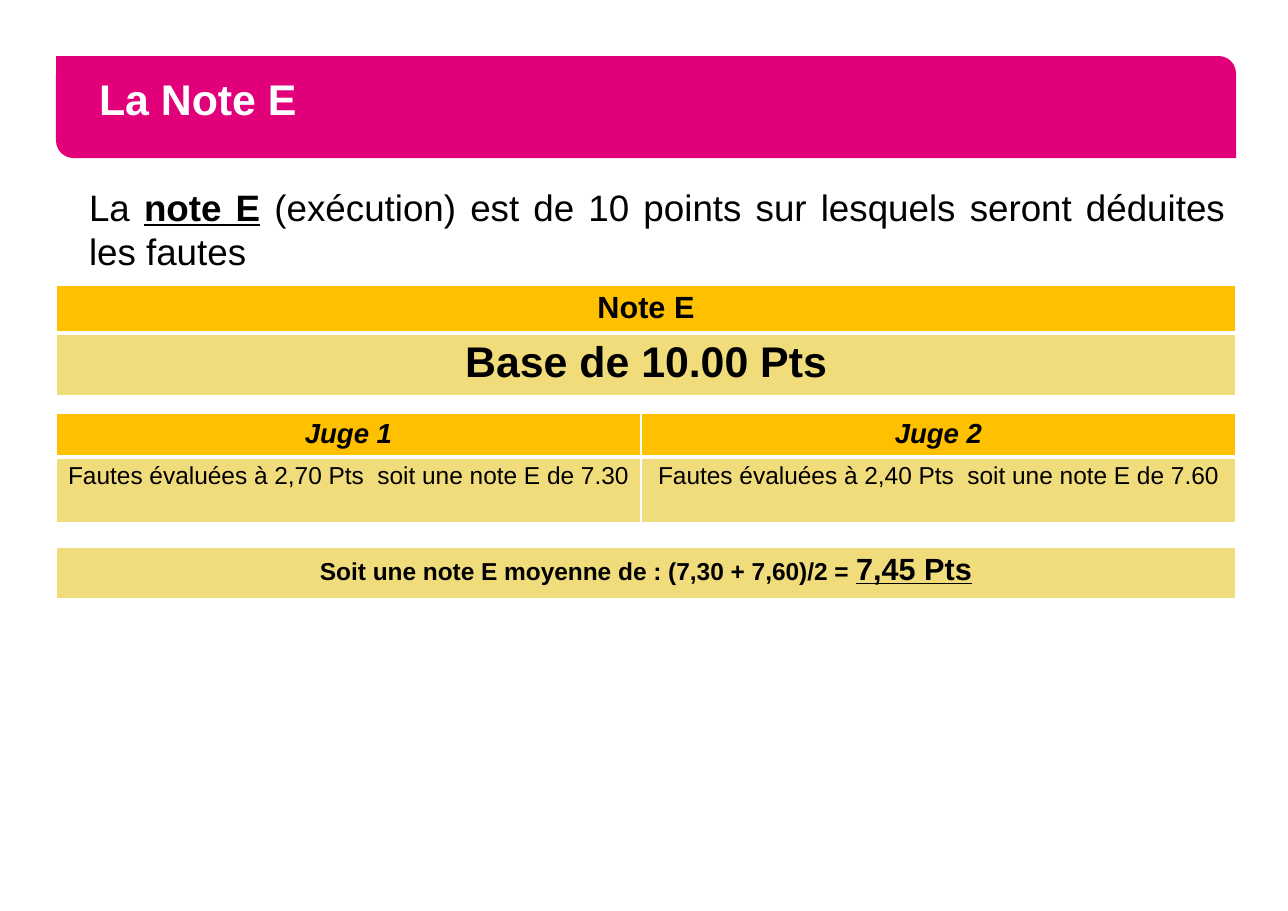
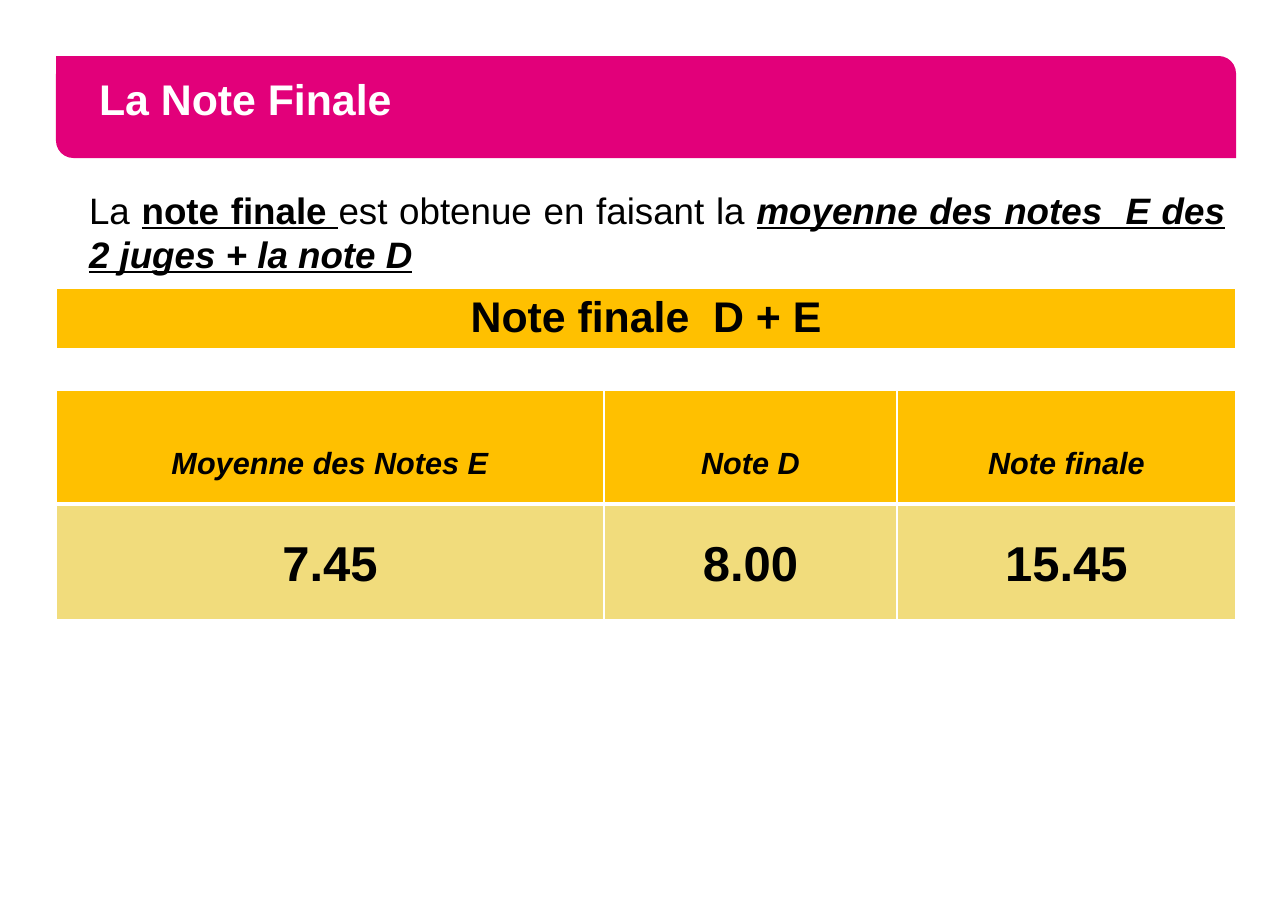
from dataclasses import dataclass

from lxml import etree
from pptx import Presentation
from pptx.dml.color import RGBColor
from pptx.enum.shapes import MSO_SHAPE
from pptx.enum.text import MSO_ANCHOR, PP_ALIGN
from pptx.oxml.ns import qn
from pptx.util import Pt

PX = 8298
PAGE_WIDTH, PAGE_HEIGHT = 1288, 911
LEFT, CONTENT_WIDTH = 56, 1180
BAND_TOP, BAND_HEIGHT = 56, 102

BAND = MSO_SHAPE.ROUND_2_DIAG_RECTANGLE
MIDDLE = MSO_ANCHOR.MIDDLE
ALIGN_LEFT, CENTER, JUSTIFY = PP_ALIGN.LEFT, PP_ALIGN.CENTER, PP_ALIGN.JUSTIFY

FONT = "Arial"
PINK = RGBColor(0xE2, 0x00, 0x7A)
AMBER = RGBColor(0xFF, 0xC0, 0x00)
SAND = RGBColor(0xF1, 0xDC, 0x7C)
WHITE = RGBColor(0xFF, 0xFF, 0xFF)
BLACK = RGBColor(0x00, 0x00, 0x00)


@dataclass
class Span:
    """A piece of text; style holds any of b (bold), i (italic), u (underline)."""
    text: str
    size: int
    style: str = ""


@dataclass
class Row:
    height: int
    fill: RGBColor
    cells: list
    spacing: float = 1.0


def add_spans(para, spans, color=BLACK):
    for span in spans:
        run = para.add_run()
        run.text = span.text
        font = run.font
        font.name, font.size = FONT, Pt(span.size)
        font.color.rgb = color
        font.bold = "b" in span.style
        font.italic = "i" in span.style
        font.underline = "u" in span.style


def add_title_band(page, title):
    band = page.shapes.add_shape(BAND, LEFT * PX, BAND_TOP * PX,
                                 CONTENT_WIDTH * PX, BAND_HEIGHT * PX)
    band.adjustments[0], band.adjustments[1] = 0, 0.17
    band.shadow.inherit = False
    band.fill.solid()
    band.fill.fore_color.rgb = PINK
    band.line.fill.background()
    frame = band.text_frame
    frame.word_wrap = True
    frame.vertical_anchor = MIDDLE
    frame.margin_left = frame.margin_right = 38 * PX
    para = frame.paragraphs[0]
    para.alignment = ALIGN_LEFT
    para.line_spacing = Pt(22)
    add_spans(para, [Span(title, 28, "b")], WHITE)


def add_intro(page, top, spans):
    box = page.shapes.add_textbox(LEFT * PX, top * PX, CONTENT_WIDTH * PX, 100 * PX)
    frame = box.text_frame
    frame.word_wrap = True
    frame.margin_left = 33 * PX
    para = frame.paragraphs[0]
    para.alignment = JUSTIFY
    para.space_after = Pt(6)
    add_spans(para, spans)


def set_borders(cell, widths):
    """Draw white borders; widths maps L, R, T and B to points, in that order."""
    properties = cell._tc.get_or_add_tcPr()
    for side, width in widths.items():
        line = etree.SubElement(properties, qn(f"a:ln{side}"), w=str(Pt(width)))
        fill = etree.SubElement(line, qn("a:solidFill"))
        etree.SubElement(fill, qn("a:srgbClr"), val=str(WHITE))


def add_score_table(page, top, columns, rows):
    height = sum(row.height for row in rows)
    table = page.shapes.add_table(len(rows), len(columns), LEFT * PX, top * PX,
                                  sum(columns) * PX, height * PX).table
    table.first_row = table.horz_banding = False
    for column, width in zip(table.columns, columns):
        column.width = width * PX
    for row_index, row in enumerate(rows):
        table.rows[row_index].height = row.height * PX
        heading = row_index == 0
        borders = {"L": 1, "R": 1, "T": 1 if heading else 3, "B": 3 if heading else 1}
        for column_index, spans in enumerate(row.cells):
            cell = table.cell(row_index, column_index)
            set_borders(cell, borders)
            cell.fill.solid()
            cell.fill.fore_color.rgb = row.fill
            para = cell.text_frame.paragraphs[0]
            para.alignment = CENTER
            para.line_spacing = row.spacing
            add_spans(para, spans)


def single_cells(texts, size, style=""):
    return [[Span(text, size, style)] for text in texts]


def add_page(deck, title, intro_top, intro, tables):
    page = deck.slides.add_slide(deck.slide_layouts[6])
    add_title_band(page, title)
    add_intro(page, intro_top, intro)
    for top, columns, rows in tables:
        add_score_table(page, top, columns, rows)


def add_execution_page(deck):
    intro = [
        Span("La ", 24),
        Span("note E", 24, "bu"),
        Span(" (exécution) est de 10 points sur lesquels seront déduites les fautes", 24),
    ]
    base = [
        Row(48, AMBER, single_cells(["Note E"], 20, "b")),
        Row(63, SAND, single_cells(["Base de 10.00 Pts"], 28, "b")),
    ]
    judges = [
        Row(44, AMBER, single_cells(["Juge 1", "Juge 2"], 18, "bi")),
        Row(66, SAND, single_cells([
            "Fautes évaluées à 2,70 Pts  soit une note E de 7.30",
            "Fautes évaluées à 2,40 Pts  soit une note E de 7.60"], 16)),
    ]
    average = [Row(53, SAND, [[
        Span("Soit une note E moyenne de : (7,30 + 7,60)/2 = ", 16, "b"),
        Span("7,45 Pts", 20, "bu")]])]
    add_page(deck, "La Note E", 179, intro, [
        (285, [CONTENT_WIDTH], base),
        (413, [585, 595], judges),
        (547, [CONTENT_WIDTH], average),
    ])


def add_final_page(deck):
    intro = [
        Span("La ", 24),
        Span("note finale ", 24, "bu"),
        Span("est obtenue en faisant la ", 24),
        Span("moyenne des notes  E des 2 juges + la note D", 24, "biu"),
    ]
    heading = [Row(62, AMBER, single_cells(["Note finale  D + E"], 28, "b"))]
    scores = [
        Row(114, AMBER, single_cells(
            ["Moyenne des Notes E", "Note D", "Note finale"], 20, "bi"), 2.5),
        Row(116, SAND, single_cells(["7.45", "8.00", "15.45"], 32, "b"), 1.5),
    ]
    add_page(deck, "La Note Finale", 182, intro, [
        (288, [CONTENT_WIDTH], heading),
        (390, [548, 293, 339], scores),
    ])


def main():
    deck = Presentation()
    deck.slide_width, deck.slide_height = PAGE_WIDTH * PX, PAGE_HEIGHT * PX
    add_execution_page(deck)
    add_final_page(deck)
    deck.save("out.pptx")


if __name__ == "__main__":
    main()
